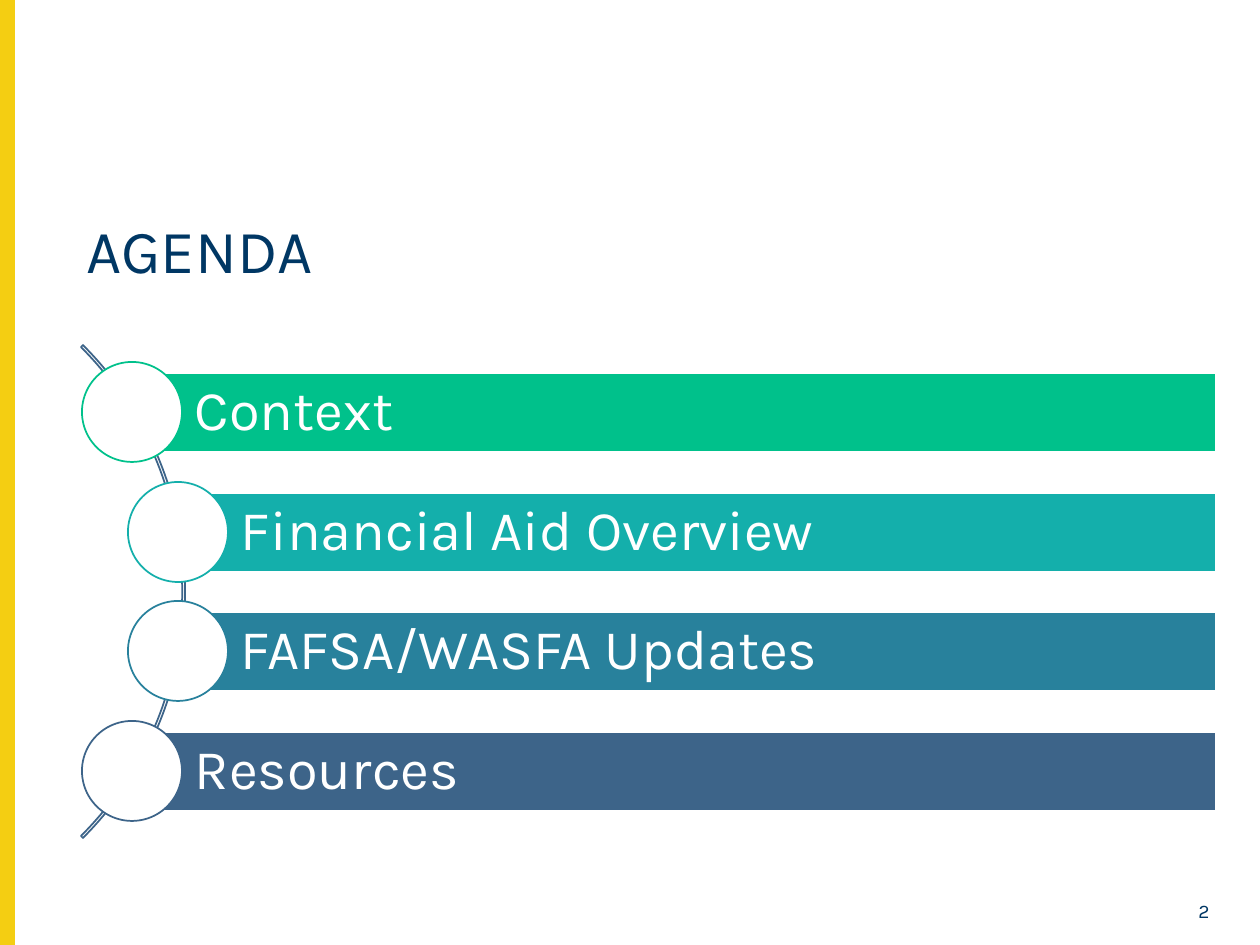
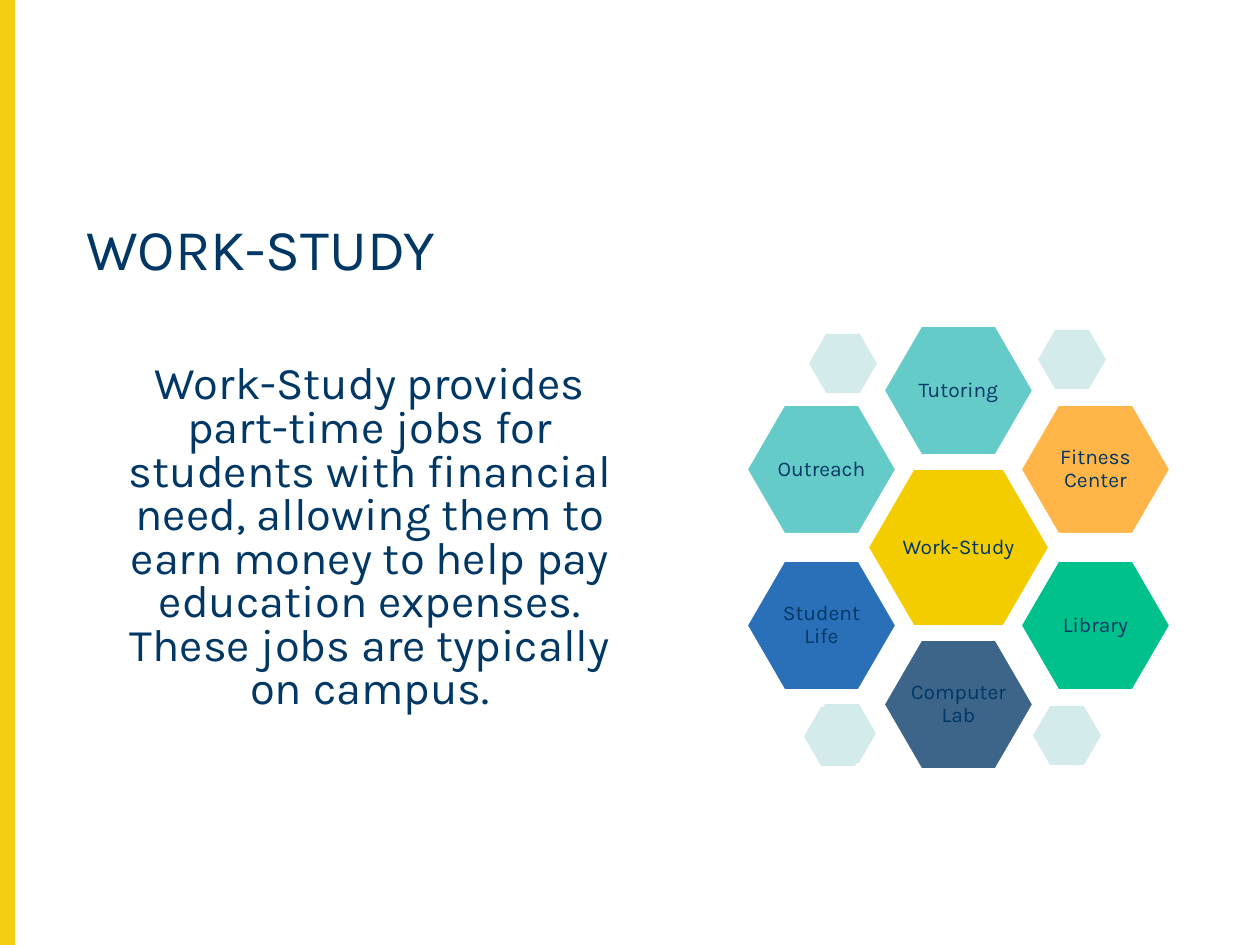
from dataclasses import dataclass

from pptx import Presentation
from pptx.dml.color import RGBColor
from pptx.enum.shapes import MSO_SHAPE
from pptx.enum.text import MSO_ANCHOR, PP_ALIGN
from pptx.util import Emu, Pt

PX_PER_INCH = 126
SLIDE_W, SLIDE_H = 1260, 945


@dataclass(frozen=True)
class Theme:
    font: str = "Karla"
    navy: str = "003764"
    white: str = "FFFFFF"
    band: str = "F4CE12"
    yellow: str = "F4CD00"
    green: str = "00C18B"
    teal: str = "14AFAB"
    ocean: str = "28819C"
    slate: str = "3D6489"
    aqua: str = "65CBC9"
    orange: str = "FFB547"
    blue: str = "2A70B8"
    mist: str = "D3ECEB"
    agenda_title: float = 35
    work_title: float = 33
    agenda_item: float = 32
    body: float = 25.9
    label: float = 12
    page_number: float = 11


T = Theme()


def px(n):
    return Emu(round(n * 914400 / PX_PER_INCH))


def rgb(color):
    return RGBColor.from_string(color)


def write(s, text, size, color=T.navy, align=PP_ALIGN.LEFT, spacing=0.9,
          anchor=MSO_ANCHOR.TOP, insets=None):
    """Put one paragraph in s; insets are left, top, right, bottom in px."""
    tf = s.text_frame
    tf.word_wrap = True
    tf.vertical_anchor = anchor
    if insets:
        (tf.margin_left, tf.margin_top,
         tf.margin_right, tf.margin_bottom) = map(px, insets)
    p = tf.paragraphs[0]
    p.alignment = align
    p.line_spacing = spacing
    r = p.add_run()
    r.text = text
    r.font.name = T.font
    r.font.size = Pt(size)
    r.font.color.rgb = rgb(color)


def add_text(slide, box, text, size, **style):
    write(slide.shapes.add_textbox(*map(px, box)), text, size, **style)


def add_preset(slide, kind, box, fill=None, line=None):
    s = slide.shapes.add_shape(kind, *map(px, box))
    s.shadow.inherit = False
    if fill:
        s.fill.solid()
        s.fill.fore_color.rgb = rgb(fill)
    else:
        s.fill.background()
    if line:
        s.line.color.rgb = rgb(line)
        s.line.width = Pt(1)
    else:
        s.line.fill.background()
    return s


def add_titled_slide(prs, title, size):
    slide = prs.slides.add_slide(prs.slide_layouts[6])
    add_preset(slide, MSO_SHAPE.RECTANGLE, (0, 0, 14, SLIDE_H), T.band, T.band)
    add_text(slide, (74, 214, 1149, 110), title, size)
    return slide


def add_agenda_arc(slide):
    s = add_preset(slide, MSO_SHAPE.BLOCK_ARC, (-512, 243, 697, 697), line=T.slate)
    for i, value in enumerate((189, 27, 0.004)):
        s.adjustments[i] = value


def add_agenda_item(slide, x, y, text, color):
    """Draw a bar that starts at x, centred on y, with a ring on its left end."""
    bar_h, ring, right = 79, 100, 1216
    bar = add_preset(slide, MSO_SHAPE.RECTANGLE,
                     (x, y - bar_h // 2, right - x, bar_h), color, T.white)
    write(bar, text, T.agenda_item, color=T.white,
          anchor=MSO_ANCHOR.MIDDLE, insets=(63, 11, 11, 11))
    add_preset(slide, MSO_SHAPE.OVAL, (x - ring // 2, y - ring // 2, ring, ring),
               T.white, color)


def add_hexagon(slide, box, fill, line=None):
    s = add_preset(slide, MSO_SHAPE.HEXAGON, box, fill, line)
    s.adjustments[0] = 0.29
    return s


def add_job(slide, cx, cy, w, h, text, fill):
    s = add_hexagon(slide, (cx - w // 2, cy - h // 2, w, h), fill, T.white)
    write(s, text, T.label, align=PP_ALIGN.CENTER,
          anchor=MSO_ANCHOR.MIDDLE, insets=(0, 0, 0, 0))


def build_agenda(prs):
    slide = add_titled_slide(prs, "AGENDA", T.agenda_title)
    add_agenda_arc(slide)
    outer, inner = 132, 178
    items = [(outer, "Context", T.green),
             (inner, "Financial Aid Overview", T.teal),
             (inner, "FAFSA/WASFA Updates", T.ocean),
             (outer, "Resources", T.slate)]
    for i, (x, text, color) in enumerate(items):
        add_agenda_item(slide, x, 412 + (239 * i + 1) // 2, text, color)
    add_text(slide, (1158, 893, 64, 33), "2", T.page_number,
             align=PP_ALIGN.RIGHT, spacing=1.0)


def build_work_study(prs):
    slide = add_titled_slide(prs, "WORK-STUDY", T.work_title)
    add_text(slide, (92, 359, 556, 377),
             "Work-Study provides part-time jobs for students with financial "
             "need, allowing them to earn money to help pay education expenses. "
             "These jobs are typically on campus.",
             T.body, align=PP_ALIGN.CENTER, spacing=0.8)

    for x, y in [(804, 707), (808, 704), (809, 334), (1038, 330), (1033, 706)]:
        add_hexagon(slide, (x, y, 68, 59), T.mist)

    cx, cy, column, row = 958, 547, 137, 157
    add_job(slide, cx, cy, 181, 157, "Work-Study", T.yellow)
    # Ring places count columns and half rows from the centre.
    ring = [(0, -2, "Tutoring", T.aqua),
            (1, -1, "Fitness Center", T.orange),
            (1, 1, "Library", T.green),
            (0, 2, "Computer Lab", T.slate),
            (-1, 1, "Student Life", T.blue),
            (-1, -1, "Outreach", T.aqua)]
    for columns, half_rows, text, fill in ring:
        add_job(slide, cx + columns * column, cy + int(half_rows * row / 2),
                149, 129, text, fill)


def main():
    prs = Presentation()
    prs.slide_width, prs.slide_height = px(SLIDE_W), px(SLIDE_H)
    build_agenda(prs)
    build_work_study(prs)
    prs.save("out.pptx")


if __name__ == "__main__":
    main()
